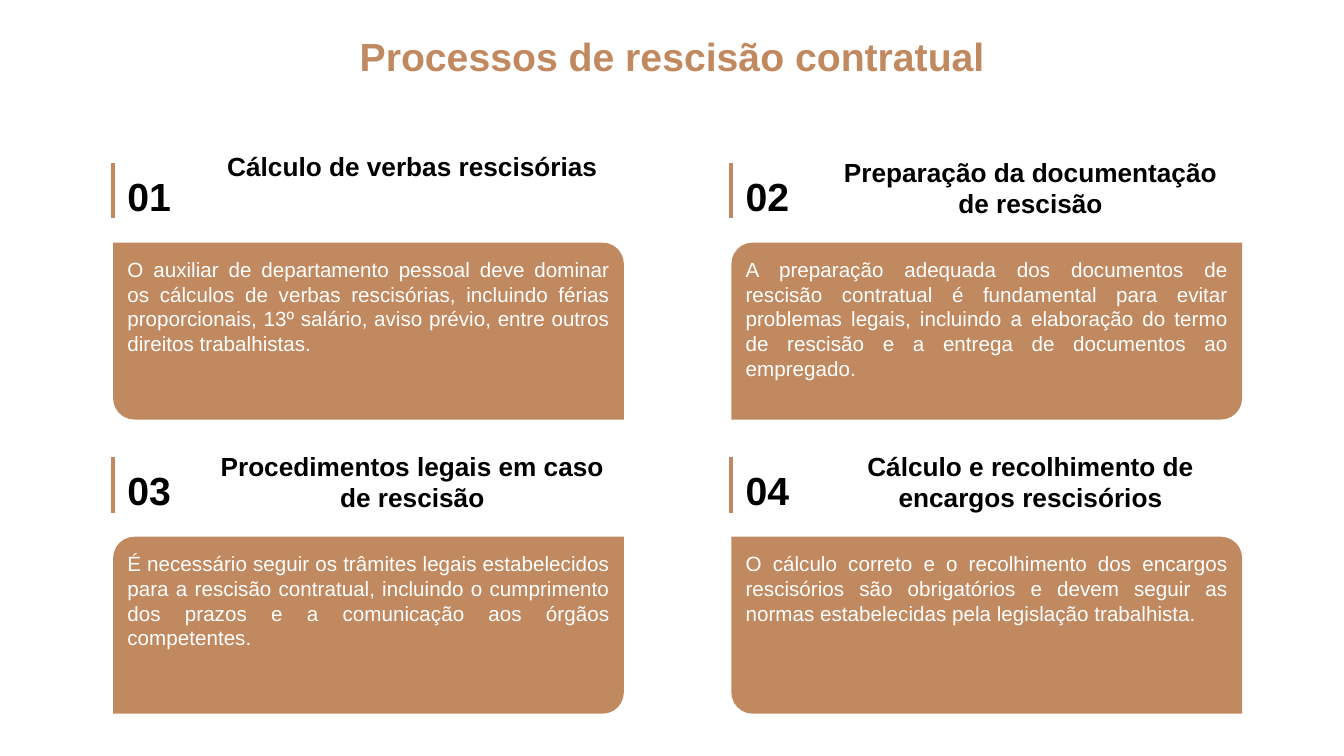
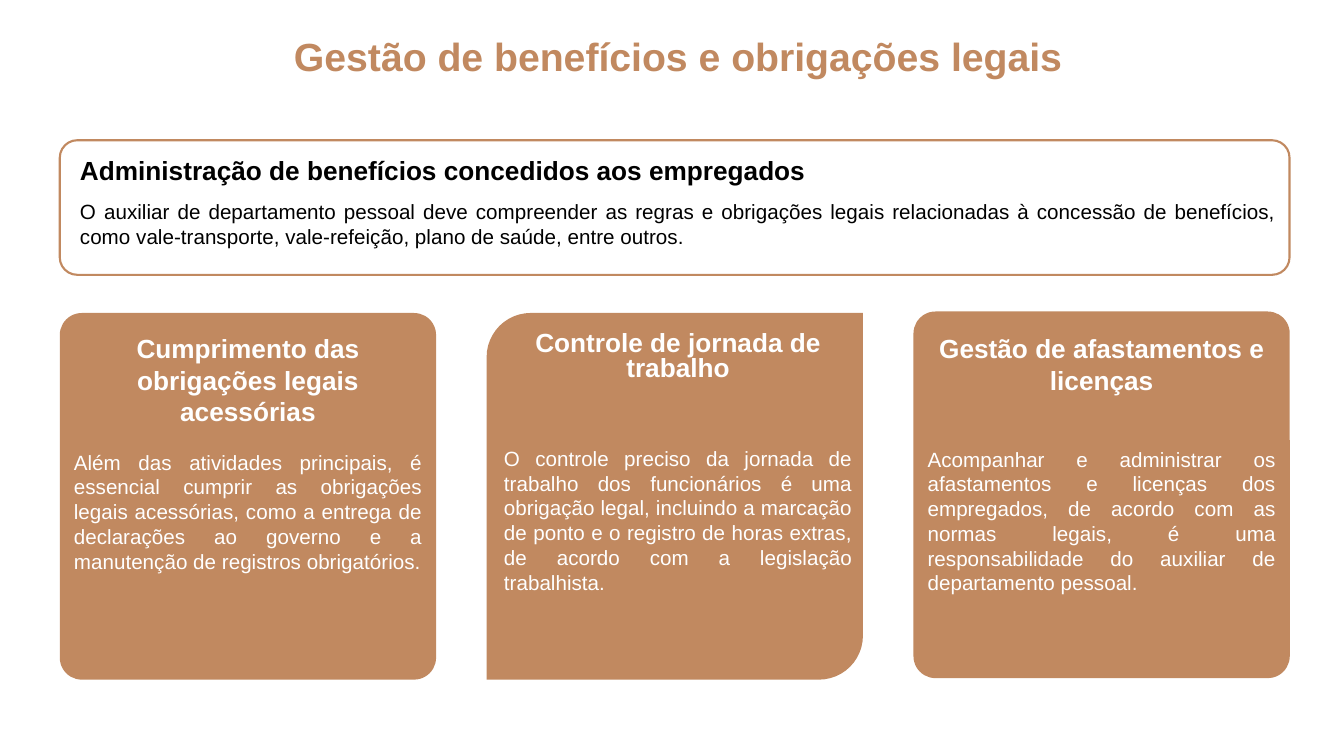
from lxml import etree
from pptx import Presentation
from pptx import util as u
from pptx.dml.color import RGBColor
from pptx.enum import shapes, text
from pptx.oxml.ns import qn

INK = {"clay": "C18960", "white": "FFFFFF", "black": "000000"}
SIZE = {"big": 28, "head": 18.7, "body": 14.7}
ALIGN = {"left": text.PP_ALIGN.LEFT, "mid": text.PP_ALIGN.CENTER,
         "full": text.PP_ALIGN.JUSTIFY}
ROUND = shapes.MSO_SHAPE.ROUNDED_RECTANGLE
LEAF = shapes.MSO_SHAPE.ROUND_2_DIAG_RECTANGLE
PAD = 0.14

STEPS = [
    ("Cálculo de verbas rescisórias",
     "O auxiliar de departamento pessoal deve dominar os cálculos de verbas rescisórias, "
     "incluindo férias proporcionais, 13º salário, aviso prévio, entre outros direitos "
     "trabalhistas.", 0.8, (0, 0.12)),
    ("Preparação da documentação de rescisão",
     "A preparação adequada dos documentos de rescisão contratual é fundamental para evitar "
     "problemas legais, incluindo a elaboração do termo de rescisão e a entrega de documentos "
     "ao empregado.", 1, (0.12, 0)),
    ("Procedimentos legais em caso de rescisão",
     "É necessário seguir os trâmites legais estabelecidos para a rescisão contratual, "
     "incluindo o cumprimento dos prazos e a comunicação aos órgãos competentes.",
     1, (0.12, 0)),
    ("Cálculo e recolhimento de encargos rescisórios",
     "O cálculo correto e o recolhimento dos encargos rescisórios são obrigatórios e devem "
     "seguir as normas estabelecidas pela legislação trabalhista.", 1, (0, 0.12)),
]

DUTIES = [
    ("Cumprimento das obrigações legais acessórias",
     "Além das atividades principais, é essencial cumprir as obrigações legais acessórias, "
     "como a entrega de declarações ao governo e a manutenção de registros obrigatórios.",
     ROUND, (0.06,), 41.4, 0, 57.6, 1),
    ("Controle de jornada de trabalho",
     "O controle preciso da jornada de trabalho dos funcionários é uma obrigação legal, "
     "incluindo a marcação de ponto e o registro de horas extras, de acordo com a legislação "
     "trabalhista.", LEAF, (0.12, 0), 41.4, 0.24, 57.1, 0.8),
    ("Gestão de afastamentos e licenças",
     "Acompanhar e administrar os afastamentos e licenças dos empregados, de acordo com as "
     "normas legais, é uma responsabilidade do auxiliar de departamento pessoal.",
     ROUND, (0.06,), 41.2, 0, 57.2, 1),
]


class Deck:
    def __init__(self):
        self.prs = Presentation()
        self.prs.slide_width = u.Inches(13.33)
        self.prs.slide_height = u.Inches(7.5)
        self.slide = None

    def place(self, x, y, w, h):
        wide, high = self.prs.slide_width, self.prs.slide_height
        return [int(part * full / 100)
                for part, full in zip((x, y, w, h), (wide, high, wide, high))]

    def letter(self, shape, words, size, ink, align, bold=True, line=1, pad=PAD):
        frame = shape.text_frame
        frame.text = words
        frame.word_wrap = True
        frame.auto_size = text.MSO_AUTO_SIZE.NONE
        frame.vertical_anchor = text.MSO_ANCHOR.TOP
        frame.margin_left = frame.margin_right = u.Inches(pad)
        frame.margin_top = frame.margin_bottom = u.Inches(pad)
        para = frame.paragraphs[0]
        para.alignment = ALIGN[align]
        para.line_spacing = line
        para.space_before = u.Pt(0)
        font = para.font
        font.name = "Arial"
        font.size = u.Pt(SIZE[size])
        font.bold = bold
        font.color.rgb = RGBColor.from_string(INK[ink])

    def page(self, title, x, w):
        self.slide = self.prs.slides.add_slide(self.prs.slide_layouts[5])
        head = self.slide.shapes.title
        head.left, head.top, head.width, head.height = self.place(x, 3.6, w, 8.8)
        self.letter(head, title, "big", "clay", "mid", line=0.8)

    def label(self, area, words, size, ink, align, **style):
        box = self.slide.shapes.add_textbox(*self.place(*area))
        self.letter(box, words, size, ink, align, **style)

    def panel(self, area, kind, bends, filled=True):
        shape = self.slide.shapes.add_shape(kind, *self.place(*area))
        shape.shadow.inherit = False
        for i, bend in enumerate(bends):
            shape.adjustments[i] = bend
        clay = RGBColor.from_string(INK["clay"])
        if filled:
            shape.fill.solid()
            shape.fill.fore_color.rgb = clay
            shape.line.fill.background()
        else:
            shape.fill.background()
            shape.line.color.rgb = clay
            shape.line.width = u.Pt(1.5)
        return shape

    def bar(self, x, y, h):
        left, top, _, tall = self.place(x, y, 0, h)
        rule = self.slide.shapes.add_connector(
            shapes.MSO_CONNECTOR.STRAIGHT, left, top, left, top + tall)
        rule.line.color.rgb = RGBColor.from_string(INK["clay"])
        rule.line.width = u.Pt(3)
        etree.SubElement(rule._element.spPr, qn("a:effectLst"))


def steps(deck):
    deck.page("Processos de rescisão contratual", 7, 86)
    for i, (head, body, line, bends) in enumerate(STEPS):
        row, col = divmod(i, 2)
        x, y = 8.42 + 46 * col, 38.9 * row
        card = deck.panel((x, y + 32.1, 38, 23.4), LEAF, bends)
        deck.letter(card, body, "body", "white", "full", bold=False, pad=0.08)
        deck.bar(x, y + 21.6, 7.3)
        deck.label((x, y + 19.7, 6.2, 10.8), f"{i + 1:02}", "big", "black", "left", line=1.2)
        deck.label((x + 6.5, y + 18.8, 31.5, 12.1), head, "head", "black", "mid", line=line)


def duties(deck):
    deck.page("Gestão de benefícios e obrigações legais", 4.9, 91.1)
    deck.panel((4.45, 18.55, 91.5, 17.8), ROUND, (0.13,), filled=False)
    deck.label((4.9, 18.55, 91.1, 7.9), "Administração de benefícios concedidos aos empregados",
               "head", "black", "full")
    deck.label((4.9, 24.5, 91.1, 10.3),
               "O auxiliar de departamento pessoal deve compreender as regras e obrigações legais "
               "relacionadas à concessão de benefícios, como vale-transporte, vale-refeição, "
               "plano de saúde, entre outros.", "body", "black", "full", bold=False)
    for i, (head, body, kind, bends, top, shift, low, line) in enumerate(DUTIES):
        x = 4.45 + 31.76 * i
        deck.panel((x, top, 28, 48.5), kind, bends)
        deck.label((x + shift, 42.1, 28, 14), head, "head", "white", "mid", line=line)
        deck.label((x + shift, low, 28, 23.5), body, "body", "white", "full", bold=False)


def main():
    deck = Deck()
    steps(deck)
    duties(deck)
    deck.prs.save("out.pptx")


if __name__ == "__main__":
    main()
